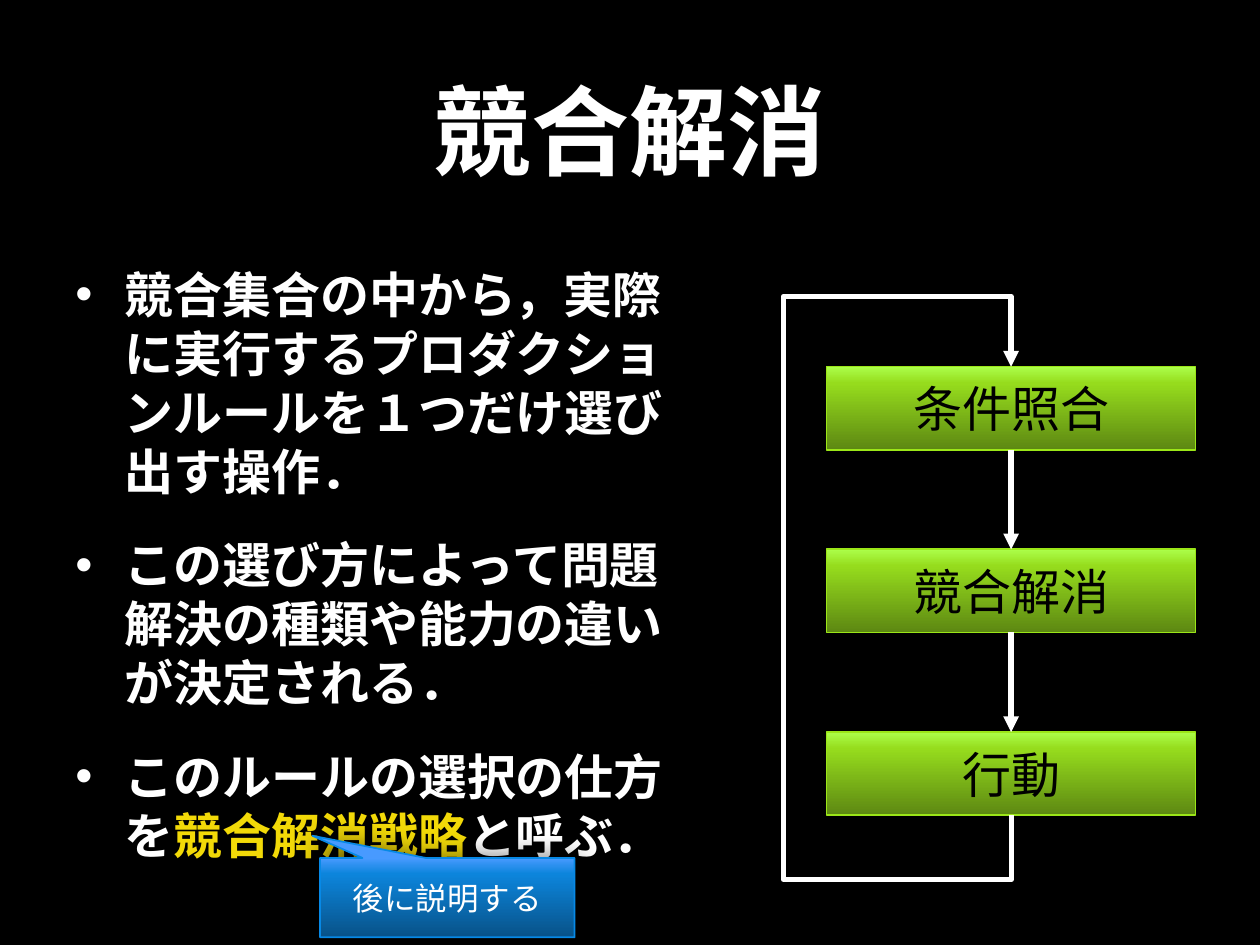
from dataclasses import dataclass

from lxml.etree import SubElement
from pptx import Presentation
from pptx.dml.color import RGBColor
from pptx.enum.shapes import MSO_CONNECTOR as Link, MSO_SHAPE as Preset
from pptx.enum.text import MSO_ANCHOR as Anchor, PP_ALIGN as Align
from pptx.oxml import parse_xml
from pptx.oxml.ns import nsdecls, qn
from pptx.util import Emu, Inches, Pt

WIDTH, HEIGHT = Inches(10), Inches(7.5)
STEP_LEFT, STEP_TOP, STEP_PITCH = 6.56, 2.91, 1.45
STEP_WIDTH, STEP_HEIGHT = 2.93, 0.66
LOOP_LEFT, LOOP_TOP, LOOP_BOTTOM = 6.03, 2.35, 6.98
WHITE, BLACK, YELLOW = "FFFFFF", "000000", "F2D908"


@dataclass
class Gloss:
    """Gradient from bottom to top, with its outline colour."""
    bottom: str
    middle: str
    top: str
    outline: str


@dataclass
class Panel:
    """A glossy labelled shape, measured in inches."""
    label: str
    left: float
    top: float
    width: float
    height: float
    size: int
    ink: str
    gloss: Gloss
    preset: Preset = Preset.RECTANGLE


@dataclass
class Part:
    """A stretch of text in one colour."""
    text: str
    ink: str = WHITE


GREEN = Gloss("5D8812", "96DC1D", "ACFF4A", "9BE618")
BLUE = Gloss("085288", "0C85DC", "489AFF", "0789E6")
STEPS = ("条件照合", "競合解消", "行動")
POINTS = (
    (Part("競合集合の中から，実際に実行するプロダクションルールを１つだけ選び出す操作．"),),
    (Part("この選び方によって問題解決の種類や能力の違いが決定される．"),),
    (Part("このルールの選択の仕方を"), Part("競合解消戦略", YELLOW), Part("と呼ぶ．")),
)


def paint(color, value: str) -> None:
    """Give a colour format a hex colour."""
    color.rgb = RGBColor.from_string(value)


def style(font, size: int, ink: str, bold: bool = False) -> None:
    """Set typeface, size, weight and colour."""
    font.name, font.size, font.bold = "Calibri", Pt(size), bold
    paint(font.color, ink)


def add_box(page, left: float, top: float, width: float, height: float):
    """Add a wrapping text box and return its frame."""
    box = page.shapes.add_textbox(Inches(left), Inches(top), Inches(width), Inches(height))
    box.text_frame.word_wrap = True
    return box.text_frame


def add_title(page, text: str) -> None:
    """Add the centred heading."""
    frame = add_box(page, 0.85, 0.12, 8.29, 1.81)
    frame.vertical_anchor = Anchor.MIDDLE
    frame.text = text
    para = frame.paragraphs[0]
    para.alignment = Align.CENTER
    style(para.runs[0].font, 56, WHITE, True)


def add_points(page) -> None:
    """Add the bulleted explanation."""
    frame = add_box(page, 0.5, 2.05, 5.05, 4.91)
    for index, parts in enumerate(POINTS):
        para = frame.add_paragraph() if index else frame.paragraphs[0]
        para.space_before = Pt(20 if index else 0)
        props = para._p.get_or_add_pPr()
        props.set("marL", str(Inches(0.39)))
        props.set("indent", str(-Inches(0.39)))
        SubElement(props, qn("a:buFont"), typeface="Arial")
        SubElement(props, qn("a:buChar"), char="•")
        style(para.font, 28, WHITE, True)
        for part in parts:
            span = para.add_run()
            span.text = part.text
            style(span.font, 28, part.ink, True)


def add_panel(page, panel: Panel):
    """Draw a glossy shape with a centred label and a soft shadow."""
    shape = page.shapes.add_shape(
        panel.preset, Inches(panel.left), Inches(panel.top), Inches(panel.width), Inches(panel.height))
    gloss = panel.gloss
    stops = "".join(
        f'<a:gs pos="{share * 1000}"><a:srgbClr val="{value}"/></a:gs>'
        for share, value in ((0, gloss.bottom), (80, gloss.middle), (100, gloss.top)))
    shape.fill.background()
    props = shape._element.spPr
    props.replace(props.find(qn("a:noFill")), parse_xml(
        f'<a:gradFill {nsdecls("a")} rotWithShape="1"><a:gsLst>{stops}</a:gsLst>'
        '<a:lin ang="16200000" scaled="0"/></a:gradFill>'))
    paint_line = shape.line
    paint_line.width = Pt(1)
    paint(paint_line.color, gloss.outline)
    shape.shadow.inherit = False
    props.find(qn("a:effectLst")).append(parse_xml(
        f'<a:outerShdw {nsdecls("a")} blurRad="{Pt(18)}" dist="{Pt(3)}" dir="5400000" rotWithShape="0">'
        '<a:srgbClr val="000000"><a:alpha val="80000"/></a:srgbClr></a:outerShdw>'))
    frame = shape.text_frame
    frame.word_wrap = panel.preset != Preset.RECTANGLE
    frame.vertical_anchor = Anchor.MIDDLE
    frame.text = panel.label
    frame.paragraphs[0].alignment = Align.CENTER
    style(frame.paragraphs[0].runs[0].font, panel.size, panel.ink)
    return shape


def add_arrow(page, kind: Link, start, end):
    """Join the bottom of one shape to the top of another."""
    arrow = page.shapes.add_connector(kind, 0, 0, 0, 0)
    arrow.begin_connect(start, 2)
    arrow.end_connect(end, 0)
    arrow.line.width = Pt(3)
    paint(arrow.line.color, WHITE)
    SubElement(arrow.line._get_or_add_ln(), qn("a:tailEnd"), type="triangle")
    SubElement(arrow._element.spPr, qn("a:effectLst"))
    return arrow


def add_loop(page, last, first) -> None:
    """Lead the last step back to the first around the left side."""
    arrow = add_arrow(page, Link.ELBOW, last, first)
    middle = first.left + first.width // 2
    bottom = last.top + last.height
    rise, thin = bottom - first.top, 1588
    arrow.left, arrow.top = Emu(middle - rise // 2), Emu(first.top + rise // 2)
    arrow.width, arrow.height = Emu(rise), Emu(thin)
    props = arrow._element.spPr
    frame = props.find(qn("a:xfrm"))
    frame.attrib.pop("flipH", None)
    frame.set("rot", "16200000")
    frame.set("flipV", "1")
    geometry = props.find(qn("a:prstGeom"))
    geometry.set("prst", "bentConnector5")
    guides = geometry.get_or_add_avLst()
    shares = ((bottom - Inches(LOOP_BOTTOM)) / rise,
              (middle - Inches(LOOP_LEFT)) / thin,
              (bottom - Inches(LOOP_TOP)) / rise)
    for number, share in enumerate(shares, 1):
        SubElement(guides, qn("a:gd"), name=f"adj{number}", fmla=f"val {round(share * 100000)}")


def main() -> None:
    """Build and save the slide."""
    deck = Presentation()
    deck.slide_width, deck.slide_height = WIDTH, HEIGHT
    page = deck.slides.add_slide(deck.slide_layouts[6])
    page.background.fill.solid()
    paint(page.background.fill.fore_color, BLACK)
    add_title(page, "競合解消")
    add_points(page)
    steps = [
        add_panel(page, Panel(label, STEP_LEFT, STEP_TOP + row * STEP_PITCH,
                              STEP_WIDTH, STEP_HEIGHT, 28, BLACK, GREEN))
        for row, label in enumerate(STEPS)]
    for upper, lower in zip(steps, steps[1:]):
        add_arrow(page, Link.STRAIGHT, upper, lower)
    add_loop(page, steps[-1], steps[0])
    callout = add_panel(page, Panel("後に説明する", 2.54, 6.81, 2.02, 0.63, 18, WHITE, BLUE,
                                    Preset.RECTANGULAR_CALLOUT))
    callout.adjustments[0], callout.adjustments[1] = -0.53, -0.78
    deck.save("out.pptx")


if __name__ == "__main__":
    main()
